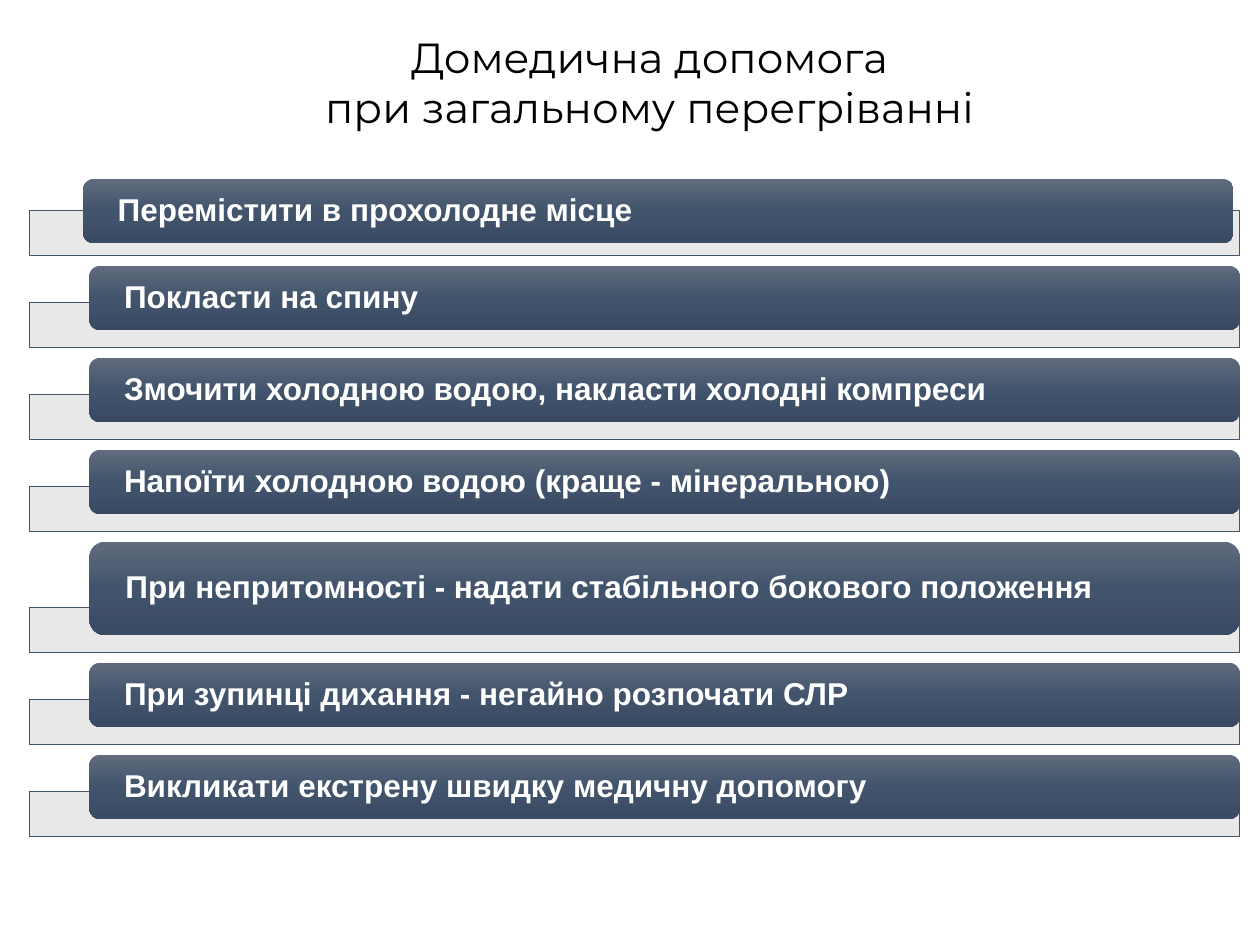
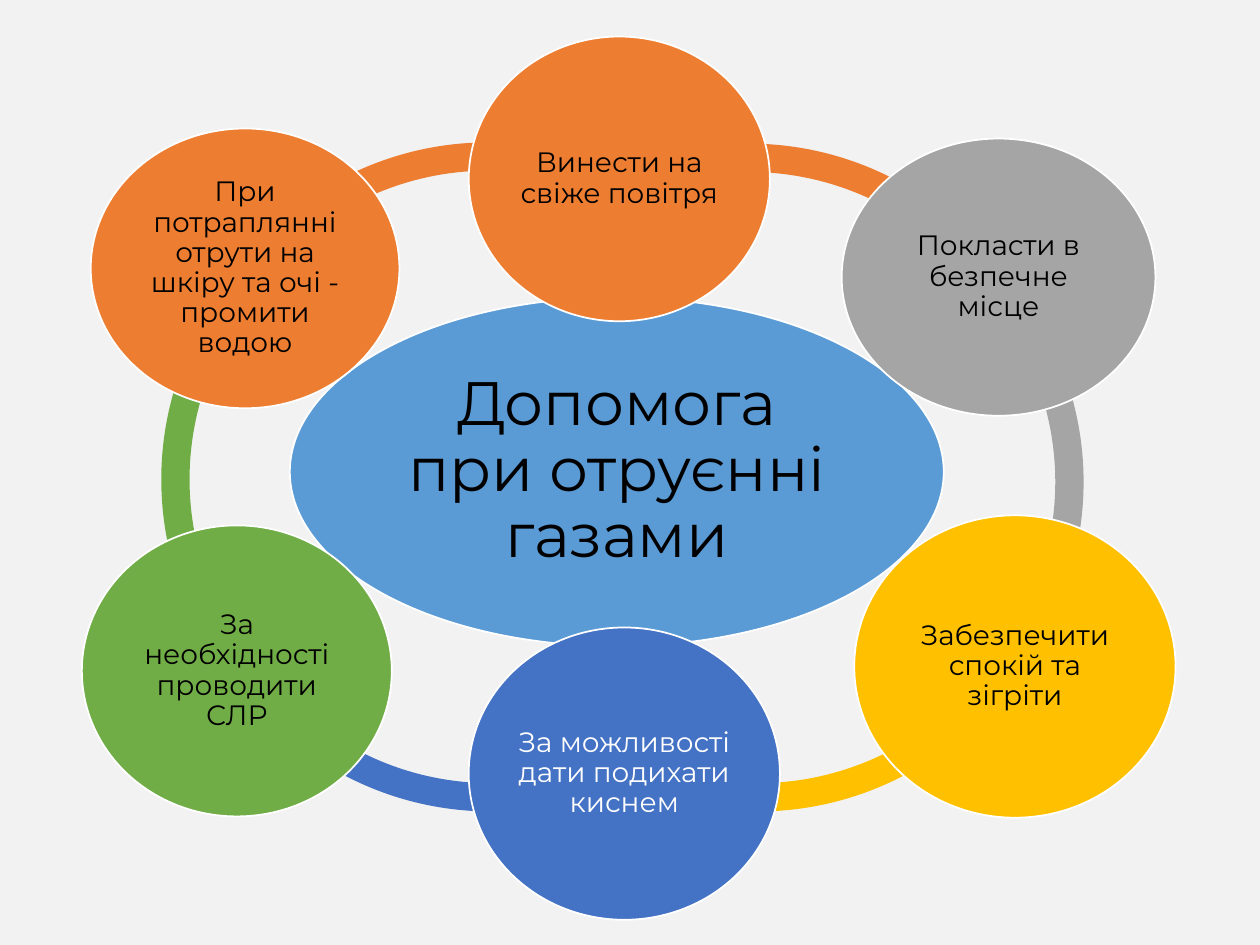
"""Builds two first-aid slides: overheating steps and help with gas poisoning."""
from copy import deepcopy
from dataclasses import dataclass

from lxml import etree
from pptx import Presentation
from pptx import util as u
from pptx.dml.color import RGBColor
from pptx.enum import shapes, text
from pptx.oxml import ns

COLUMNS, ROWS = 100, 75


@dataclass(frozen=True)
class Theme:
    """Colours, fonts and type sizes of the slides."""
    paper: str = "FFFFFF"
    mist: str = "F2F2F2"
    ink: str = "000000"
    white: str = "FFFFFF"
    plate: str = "E7E6E6"
    plate_edge: str = "44546A"
    bar: tuple = ((0, "606B7D"), (0.5, "42546C"), (1, "394A62"))
    blue: str = "5B9BD5"
    orange: str = "ED7D31"
    grey: str = "A5A5A5"
    yellow: str = "FFC000"
    navy: str = "4472C4"
    green: str = "70AD47"
    title_font: str = "Montserrat"
    step_font: str = "Arial"
    title_size: int = 24
    step_size: int = 18
    hub_size: int = 35
    bubble_size: int = 16


def write(shape, content, *, font, size, color, bold=False, align="LEFT",
          anchor="MIDDLE", inset=(0, 0), spacing=0.9, wrap=True):
    """Put text into a shape, one paragraph per line, with the given format."""
    frame = shape.text_frame
    frame.word_wrap = wrap
    frame.vertical_anchor = text.MSO_ANCHOR[anchor]
    frame.margin_left = frame.margin_right = u.Inches(inset[0])
    frame.margin_top = frame.margin_bottom = u.Inches(inset[1])
    frame.text = content
    for paragraph in frame.paragraphs:
        paragraph.alignment = text.PP_ALIGN[align]
        paragraph.line_spacing = spacing
        for run in paragraph.runs:
            run.font.name = font
            run.font.size = u.Pt(size)
            run.font.bold = bold
            run.font.color.rgb = RGBColor.from_string(color)


class Deck:
    """Holds the theme, the presentation and the current slide."""

    def __init__(self, theme):
        """Start an empty presentation on the grid."""
        self.theme = theme
        self.show = Presentation()
        self.show.slide_width, self.show.slide_height = u.Inches(10), u.Inches(7.5)
        self.slide = None

    def new_slide(self, background):
        """Add a blank slide with a plain background."""
        self.slide = self.show.slides.add_slide(self.show.slide_layouts[6])
        fill = self.slide.background.fill
        fill.solid()
        fill.fore_color.rgb = RGBColor.from_string(background)

    def place(self, left, top, width, height):
        """Turn columns and rows into lengths."""
        column = self.show.slide_width / COLUMNS
        row = self.show.slide_height / ROWS
        return [round(n) for n in
                (left * column, top * row, width * column, height * row)]

    def shape(self, kind, box, fill=None, edge=None, edge_width=1):
        """Add a flat preset shape with an optional fill and outline."""
        shape = self.slide.shapes.add_shape(shapes.MSO_SHAPE[kind], *self.place(*box))
        shape.shadow.inherit = False
        if fill:
            shape.fill.solid()
            shape.fill.fore_color.rgb = RGBColor.from_string(fill)
        if edge:
            shape.line.color.rgb = RGBColor.from_string(edge)
            shape.line.width = u.Pt(edge_width)
        else:
            shape.line.fill.background()
        return shape

    def title(self, content, box):
        """Add a centred heading."""
        heading = self.slide.shapes.add_textbox(*self.place(*box))
        write(heading, content, font=self.theme.title_font,
              size=self.theme.title_size, color=self.theme.ink, align="CENTER",
              anchor="TOP", inset=(0.1, 0.05), spacing=1, wrap=False)
        heading.text_frame.auto_size = text.MSO_AUTO_SIZE.SHAPE_TO_FIT_TEXT

    def plate(self, box):
        """Add a slightly transparent plate that lies behind a step."""
        plate = self.shape("RECTANGLE", box, self.theme.plate,
                           self.theme.plate_edge, 0.5)
        tint = plate.element.spPr.find(ns.qn("a:solidFill"))[0]
        etree.SubElement(tint, ns.qn("a:alpha"), val="90000")

    def step(self, content, box):
        """Add a rounded step bar with a vertical gradient."""
        bar = self.shape("ROUNDED_RECTANGLE", box)
        bar.fill.gradient()
        bar.fill.gradient_angle = 270
        stops = bar.element.spPr.find(ns.qn("a:gradFill")).find(ns.qn("a:gsLst"))
        stops.append(deepcopy(stops[0]))
        for stop, (position, color) in zip(bar.fill.gradient_stops, self.theme.bar):
            stop.position = position
            stop.color.rgb = RGBColor.from_string(color)
        write(bar, content, font=self.theme.step_font, size=self.theme.step_size,
              color=self.theme.white, bold=True, inset=(0.25, 0))

    def arc(self, left, top, start, end, color):
        """Add a thin arc between two angles in degrees."""
        arc = self.shape("BLOCK_ARC", (left, top, 49.9, 49.9), color)
        for index, value in enumerate((start * 0.6, end * 0.6, 0.045)):
            arc.adjustments[index] = value

    def bubble(self, content, box, fill, size, color, inset):
        """Add an ellipse with centred text."""
        bubble = self.shape("OVAL", box, fill, self.theme.white)
        write(bubble, content, font=self.theme.title_font, size=size, color=color,
              align="CENTER", inset=(inset, inset))


def overheating(deck):
    """Draw the list of steps for overheating."""
    deck.new_slide(deck.theme.paper)
    deck.title("Домедична допомога\nпри загальному перегріванні",
               (22.6, 2, 57.9, 9.1))
    low, tall, overlap = 5.1, 7.4, 2.2
    steps = (
        ("Перемістити в прохолодне місце", low),
        ("Покласти на спину", low),
        ("Змочити холодною водою, накласти холодні компреси", low),
        ("Напоїти холодною водою (краще - мінеральною)", low),
        ("При непритомності - надати стабільного бокового положення", tall),
        ("При зупинці дихання - негайно розпочати СЛР", low),
        ("Викликати екстрену швидку медичну допомогу", low),
    )
    top = 13.8
    for index, (content, height) in enumerate(steps):
        shift_x, shift_y = (0, 0) if index else (-0.5, 0.4)
        deck.plate((2.3, top + height - overlap, 96.1, 3.6))
        deck.step(content, (7.1 + shift_x, top + shift_y, 91.3, height))
        top += height + overlap


def gas_poisoning(deck):
    """Draw the ring of actions around the gas poisoning hub."""
    theme = deck.theme
    deck.new_slide(theme.mist)
    arcs = (
        (13.8, 11.3, 217.9, 295.21, theme.orange),
        (12.8, 13.1, 140.32, 222.12, theme.green),
        (14, 14.5, 64.2, 145.51, theme.navy),
        (35.2, 14.5, 33.49, 115.82, theme.yellow),
        (36.1, 13.3, 318.34, 36.94, theme.grey),
        (34.5, 11.4, 244.92, 324.1, theme.orange),
    )
    for arc in arcs:
        deck.arc(*arc)
    deck.bubble("Допомога при отруєнні газами", (23, 23.6, 51.9, 27.7),
                theme.blue, theme.hub_size, theme.ink, 0.05)
    actions = (
        ("Винести на свіже повітря", (37.2, 2.9, 23.9, 22.6), theme.orange),
        ("Покласти в безпечне місце", (66.8, 11, 24.9, 22), theme.grey),
        ("Забезпечити спокій та зігріти", (67.8, 40.9, 25.5, 24), theme.yellow),
        ("За можливості дати подихати киснем", (37.2, 49.8, 24.7, 23.2), theme.navy),
        ("За необхідності проводити СЛР", (6.5, 41.7, 24.6, 23.1), theme.green),
        ("При потраплянні отрути на шкіру та очі - промити водою",
         (7.2, 10.2, 24.5, 22.2), theme.orange),
    )
    for content, box, fill in actions:
        color = theme.white if fill == theme.navy else theme.ink
        deck.bubble(content, box, fill, theme.bubble_size, color, 0.02)


def main():
    """Build both slides and save them."""
    deck = Deck(Theme())
    overheating(deck)
    gas_poisoning(deck)
    deck.show.save("out.pptx")


if __name__ == "__main__":
    main()
